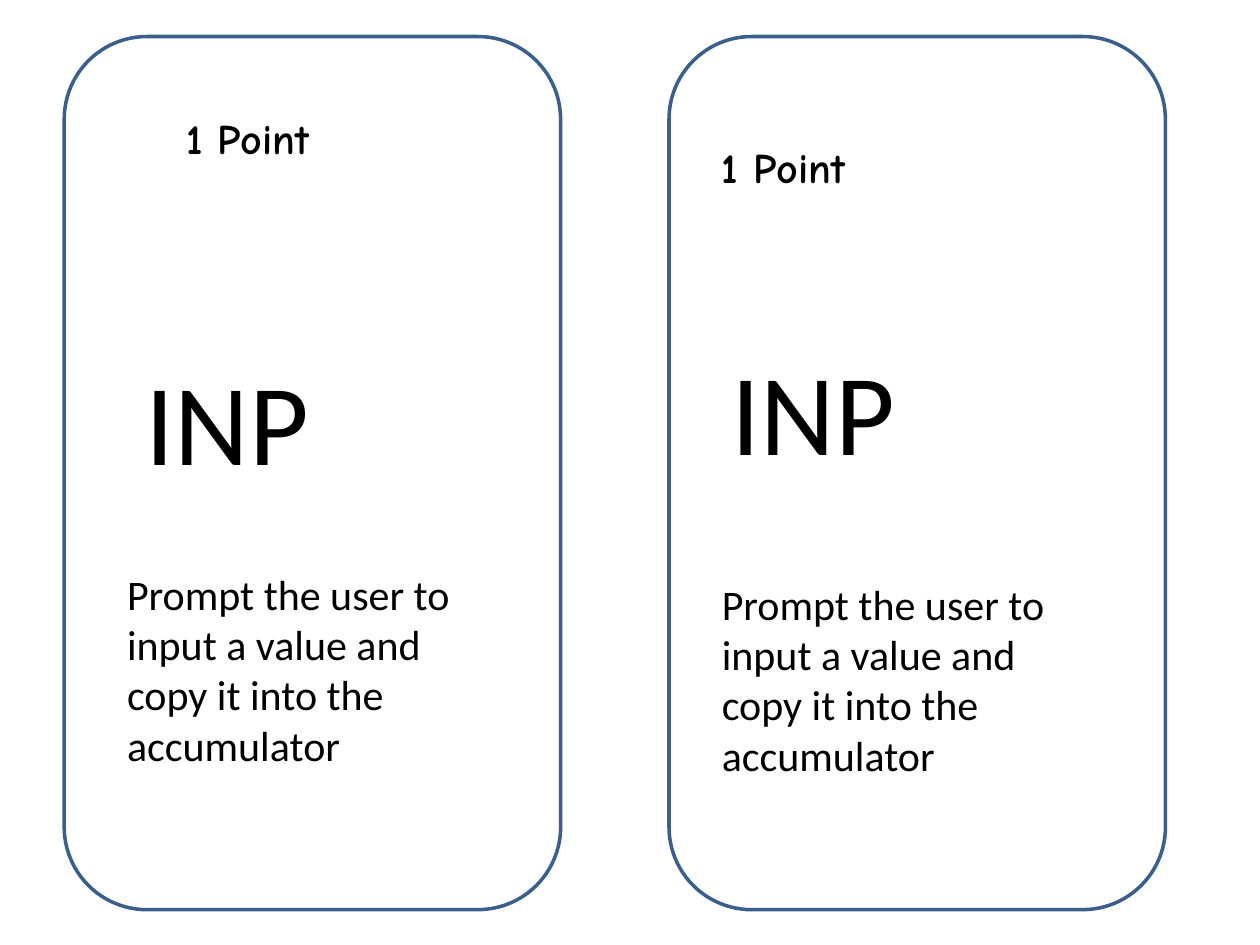
"""Builds a slide with two instruction cards for the INP command."""
import pptx
import pptx.dml.color
import pptx.enum.shapes
import pptx.enum.text
import pptx.util

COLORS = {"outline": "3A5F8C", "text": "000000"}
SLIDE_W, SLIDE_H = pptx.util.Inches(10), pptx.util.Inches(7.5)
CARD_LEFTS = (5.1, 53.1)
CARD_TOP, CARD_W, CARD_H = 3.87, 39.4, 92.4

TEXTS = [
    {"text": "INP", "size": (28.3, 16.13),
     "spots": ((10.6, 36.4), (57.1, 35.33)),
     "font": {"name": "Calibri", "size": pptx.util.Pt(66)}},
    {"text": "Prompt the user to input a value and copy it into the accumulator",
     "size": (29.9, 22.93),
     "spots": ((9.1, 59.47), (56.3, 60.53)),
     "font": {"name": "Calibri", "size": pptx.util.Pt(24)}},
    {"text": "1 Point", "size": (23.6, 6.67),
     "spots": ((13.8, 11.2), (56.3, 14.27)),
     "font": {"name": "Comic Neue", "size": pptx.util.Pt(24), "bold": True}},
]


def rgb(name):
    return pptx.dml.color.RGBColor.from_string(COLORS[name])


def box(left, top, width, height):
    return (int(SLIDE_W * left / 100), int(SLIDE_H * top / 100),
            int(SLIDE_W * width / 100), int(SLIDE_H * height / 100))


def add_card(s, left):
    kind = pptx.enum.shapes.MSO_SHAPE.ROUNDED_RECTANGLE
    sp = s.shapes.add_shape(kind, *box(left, CARD_TOP, CARD_W, CARD_H))
    sp.shadow.inherit = False
    sp.fill.background()
    sp.line.color.rgb = rgb("outline")
    sp.line.width = pptx.util.Pt(2)


def add_text(s, text, spot, size, font):
    tf = s.shapes.add_textbox(*box(*spot, *size)).text_frame
    tf.word_wrap = True
    tf.auto_size = pptx.enum.text.MSO_AUTO_SIZE.SHAPE_TO_FIT_TEXT
    r = tf.paragraphs[0].add_run()
    r.text = text
    for key, value in font.items():
        setattr(r.font, key, value)
    r.font.color.rgb = rgb("text")


def main():
    prs = pptx.Presentation()
    prs.slide_width, prs.slide_height = SLIDE_W, SLIDE_H
    s = prs.slides.add_slide(prs.slide_layouts[6])
    for left in CARD_LEFTS:
        add_card(s, left)
    for item in TEXTS:
        for spot in item["spots"]:
            add_text(s, item["text"], spot, item["size"], item["font"])
    prs.save("out.pptx")


if __name__ == "__main__":
    main()
